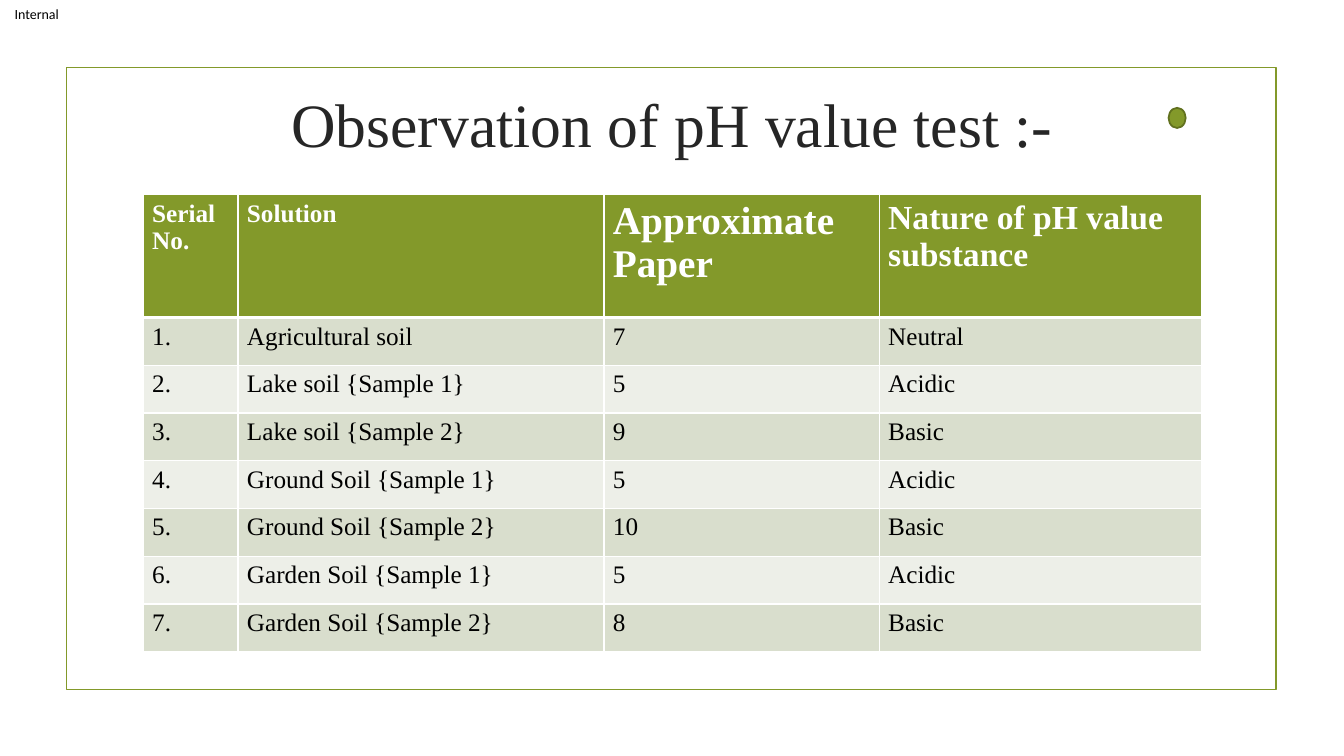
from lxml import etree
from pptx import Presentation
from pptx.dml.color import RGBColor
from pptx.enum.shapes import MSO_SHAPE
from pptx.enum.text import MSO_ANCHOR, PP_ALIGN
from pptx.oxml.ns import qn
from pptx.util import Inches, Pt

RECTANGLE, OVAL = MSO_SHAPE.RECTANGLE, MSO_SHAPE.OVAL
MIDDLE, CENTER = MSO_ANCHOR.MIDDLE, PP_ALIGN.CENTER

COLORS = {
    "green": "83992A",
    "dark green": "61711F",
    "odd row": "D9DECD",
    "even row": "EDEFE8",
    "title": "262626",
    "black": "000000",
    "white": "FFFFFF",
}

HEADINGS = [("Serial No.", 18), ("Solution", 18),
            ("Approximate Paper", 28), ("Nature of pH value substance", 24)]
OBSERVATIONS = [
    ("Agricultural soil", 7, "Neutral"),
    ("Lake soil {Sample 1}", 5, "Acidic"),
    ("Lake soil {Sample 2}", 9, "Basic"),
    ("Ground Soil {Sample 1}", 5, "Acidic"),
    ("Ground Soil {Sample 2}", 10, "Basic"),
    ("Garden Soil {Sample 1}", 5, "Acidic"),
    ("Garden Soil {Sample 2}", 8, "Basic"),
]
COLUMN_WIDTHS = [0.94, 3.63, 2.73, 3.2]
HEADER_HEIGHT, ROW_HEIGHT = 1.22, 0.474


def color(name):
    return RGBColor.from_string(COLORS[name])


class SlideBuilder:
    serif = "Times New Roman"
    outline = Pt(1.25)

    def __init__(self, slide):
        self.slide = slide

    def style(self, paragraph, size, ink, font=None, bold=False):
        paragraph.font.name = font or self.serif
        paragraph.font.size = Pt(size)
        paragraph.font.bold = bold
        paragraph.font.color.rgb = color(ink)

    def shape(self, kind, box, line, fill=None):
        shape = self.slide.shapes.add_shape(kind, *map(Inches, box))
        shape.shadow.inherit = False
        if fill:
            shape.fill.solid()
            shape.fill.fore_color.rgb = color(fill)
        else:
            shape.fill.background()
        shape.line.color.rgb = color(line)
        shape.line.width = self.outline

    def text(self, words, box, size, ink, font=None, inset=0.0):
        frame = self.slide.shapes.add_textbox(*map(Inches, box)).text_frame
        frame.word_wrap = True
        frame.vertical_anchor = MIDDLE
        frame.margin_left = frame.margin_right = Inches(inset)
        frame.margin_top = frame.margin_bottom = Inches(inset / 2)
        paragraph = frame.paragraphs[0]
        paragraph.text = words
        paragraph.alignment = CENTER
        self.style(paragraph, size, ink, font)

    def table(self, left, top, widths, heights):
        table = self.slide.shapes.add_table(
            len(heights), len(widths), Inches(left), Inches(top),
            Inches(sum(widths)), Inches(sum(heights))).table
        for column, width in zip(table.columns, widths):
            column.width = Inches(width)
        for row, height in zip(table.rows, heights):
            row.height = Inches(height)
        return table

    def cell(self, cell, words, size, ink, fill, bold=False, top=1, bottom=1):
        cell.margin_left = cell.margin_right = Inches(0.09)
        cell.margin_top = cell.margin_bottom = Inches(0.05)
        paragraph = cell.text_frame.paragraphs[0]
        paragraph.text = words
        self.style(paragraph, size, ink, bold=bold)
        # Borders come before the fill in the cell properties
        properties = cell._tc.get_or_add_tcPr()
        for side, width in (("L", 1), ("R", 1), ("T", top), ("B", bottom)):
            border = etree.SubElement(properties, qn(f"a:ln{side}"), w=str(Pt(width)))
            solid = etree.SubElement(border, qn("a:solidFill"))
            etree.SubElement(solid, qn("a:srgbClr"), val=COLORS["white"])
        cell.fill.solid()
        cell.fill.fore_color.rgb = color(fill)


def main():
    deck = Presentation()
    deck.slide_width, deck.slide_height = Inches(13.33), Inches(7.5)
    builder = SlideBuilder(deck.slides.add_slide(deck.slide_layouts[6]))

    # Frame, classification label and title
    builder.shape(RECTANGLE, (0.66, 0.67, 12, 6.17), "green")
    builder.text("Internal", (0, 0, 0.73, 0.28), 10, "black", font="Calibri")
    builder.text("Observation of pH value test :-", (1.42, 0.5, 10.5, 1.43),
                 44, "title", inset=0.1)

    # Observation table
    heights = [HEADER_HEIGHT] + [ROW_HEIGHT] * len(OBSERVATIONS)
    table = builder.table(1.42, 1.93, COLUMN_WIDTHS, heights)
    for column, (heading, size) in enumerate(HEADINGS):
        builder.cell(table.cell(0, column), heading, size, "white", "green",
                     bold=True, bottom=3)
    for number, observation in enumerate(OBSERVATIONS, start=1):
        band = "odd row" if number % 2 else "even row"
        for column, value in enumerate((f"{number}.", *observation)):
            builder.cell(table.cell(number, column), str(value), 18, "black",
                         band, top=3 if number == 1 else 1)

    # Accent dot
    builder.shape(OVAL, (11.59, 1.07, 0.17, 0.2), "dark green", fill="green")

    deck.save("out.pptx")


if __name__ == "__main__":
    main()
